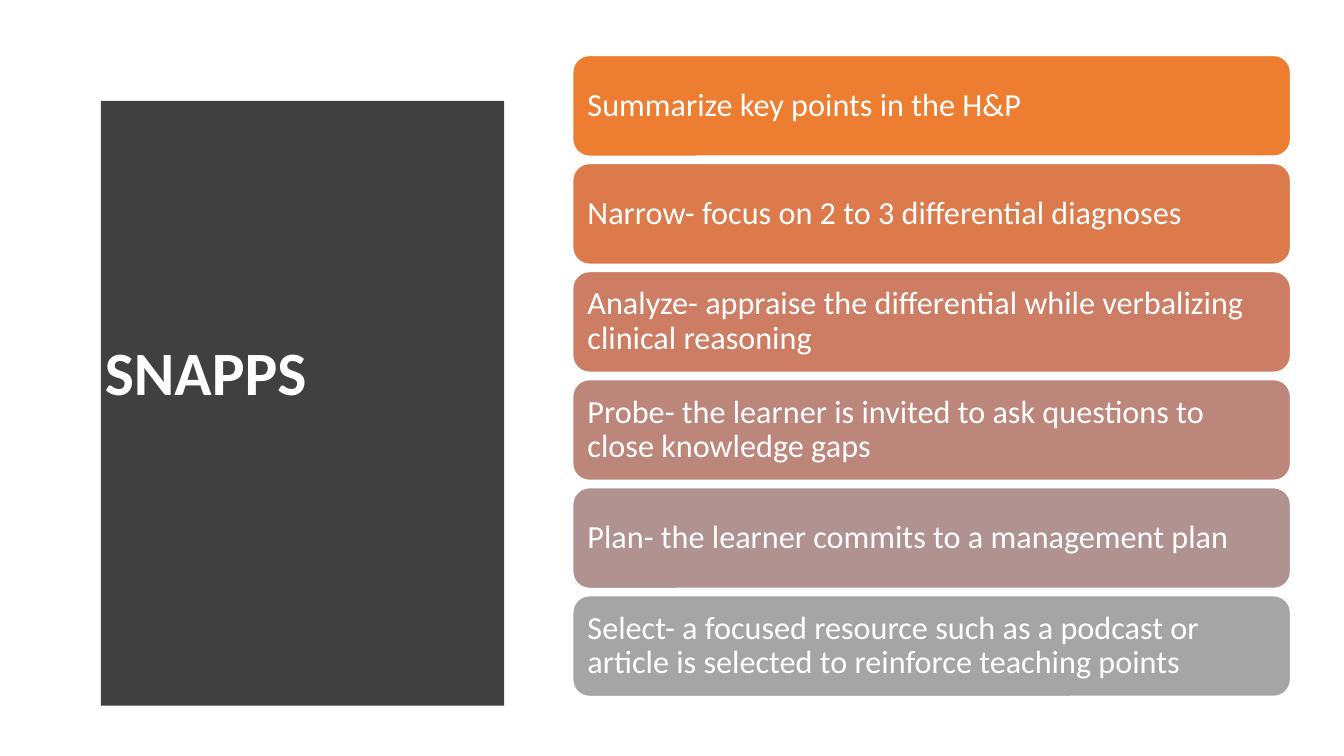
import dataclasses

import pptx
import pptx.dml.color
import pptx.enum.shapes
import pptx.enum.text
import pptx.slide
import pptx.text.text
import pptx.util

Inches = pptx.util.Inches
RGBColor = pptx.dml.color.RGBColor

WHITE = RGBColor(0xFF, 0xFF, 0xFF)
CHARCOAL = RGBColor(0x40, 0x40, 0x40)
ORANGE = RGBColor(0xED, 0x7D, 0x31)
BURNT_ORANGE = RGBColor(0xDC, 0x7A, 0x4B)
TERRACOTTA = RGBColor(0xCC, 0x7D, 0x64)
DUSTY_ROSE = RGBColor(0xBD, 0x86, 0x7B)
MAUVE = RGBColor(0xB0, 0x93, 0x91)
GRAY = RGBColor(0xA5, 0xA5, 0xA5)

PANEL_LEFT, PANEL_TOP, PANEL_BOTTOM = 0.53, 0.52, 6.96
PANEL_EDGE, PANEL_BULGE = 5.08, 0.24
CURVE_STEPS = 48
STEP_LEFT, STEP_TOP, STEP_WIDTH, STEP_HEIGHT = 5.68, 0.55, 7.12, 1.0
STEP_PITCH = 1.072


@dataclasses.dataclass(frozen=True)
class Step:
    text: str
    fill: RGBColor


STEPS = [
    Step("Summarize key points in the H&P", ORANGE),
    Step("Narrow- focus on 2 to 3 differential diagnoses", BURNT_ORANGE),
    Step("Analyze- appraise the differential while verbalizing clinical reasoning", TERRACOTTA),
    Step("Probe- the learner is invited to ask questions to close knowledge gaps", DUSTY_ROSE),
    Step("Plan- the learner commits to a management plan", MAUVE),
    Step("Select- a focused resource such as a podcast or article is selected "
         "to reinforce teaching points", GRAY),
]


def write_text(tf: pptx.text.text.TextFrame, text: str, size: int, bold: bool = False) -> None:
    tf.text = text
    tf.word_wrap = True
    tf.auto_size = pptx.enum.text.MSO_AUTO_SIZE.NONE
    tf.vertical_anchor = pptx.enum.text.MSO_ANCHOR.MIDDLE
    tf.margin_left = tf.margin_right = tf.margin_top = tf.margin_bottom = Inches(0.1)
    p = tf.paragraphs[0]
    p.alignment = pptx.enum.text.PP_ALIGN.LEFT
    p.line_spacing = 0.9
    p.font.name = "Calibri"
    p.font.size = pptx.util.Pt(size)
    p.font.bold = bold
    p.font.color.rgb = WHITE


def add_panel(s: pptx.slide.Slide) -> None:
    """Draw the dark panel whose right edge is a shallow parabola."""
    height = PANEL_BOTTOM - PANEL_TOP
    points = [(PANEL_LEFT, PANEL_BOTTOM)]
    for i in range(CURVE_STEPS + 1):
        t = i / CURVE_STEPS
        points.append((PANEL_EDGE + PANEL_BULGE * 4 * t * (1 - t), PANEL_TOP + height * t))
    # The last edge closes along the bottom, so the curve runs top to bottom.
    builder = s.shapes.build_freeform(PANEL_LEFT, PANEL_TOP, scale=Inches(1))
    builder.add_line_segments(points[1:] + points[:1])
    sp = builder.convert_to_shape()
    sp.shadow.inherit = False
    sp.fill.solid()
    sp.fill.fore_color.rgb = CHARCOAL
    sp.line.fill.background()


def add_title(s: pptx.slide.Slide, text: str) -> None:
    title = s.shapes.title
    title.left, title.top = Inches(0.94), Inches(1.11)
    title.width, title.height = Inches(3.74), Inches(5.24)
    write_text(title.text_frame, text, 44, bold=True)
    # Bring the title in front of the panel.
    s.shapes.element.append(title.element)


def add_step(s: pptx.slide.Slide, step: Step, top: float) -> None:
    sp = s.shapes.add_shape(
        pptx.enum.shapes.MSO_SHAPE.ROUNDED_RECTANGLE,
        Inches(STEP_LEFT), Inches(top), Inches(STEP_WIDTH), Inches(STEP_HEIGHT))
    sp.shadow.inherit = False
    sp.fill.solid()
    sp.fill.fore_color.rgb = step.fill
    sp.line.color.rgb = WHITE
    sp.line.width = pptx.util.Pt(1)
    write_text(sp.text_frame, step.text, 23)


def main() -> None:
    prs = pptx.Presentation()
    prs.slide_width, prs.slide_height = Inches(13.33), Inches(7.5)
    s = prs.slides.add_slide(prs.slide_layouts.get_by_name("Title Only"))
    add_panel(s)
    add_title(s, "SNAPPS")
    for i, step in enumerate(STEPS):
        add_step(s, step, STEP_TOP + i * STEP_PITCH)
    prs.save("out.pptx")


if __name__ == "__main__":
    main()
